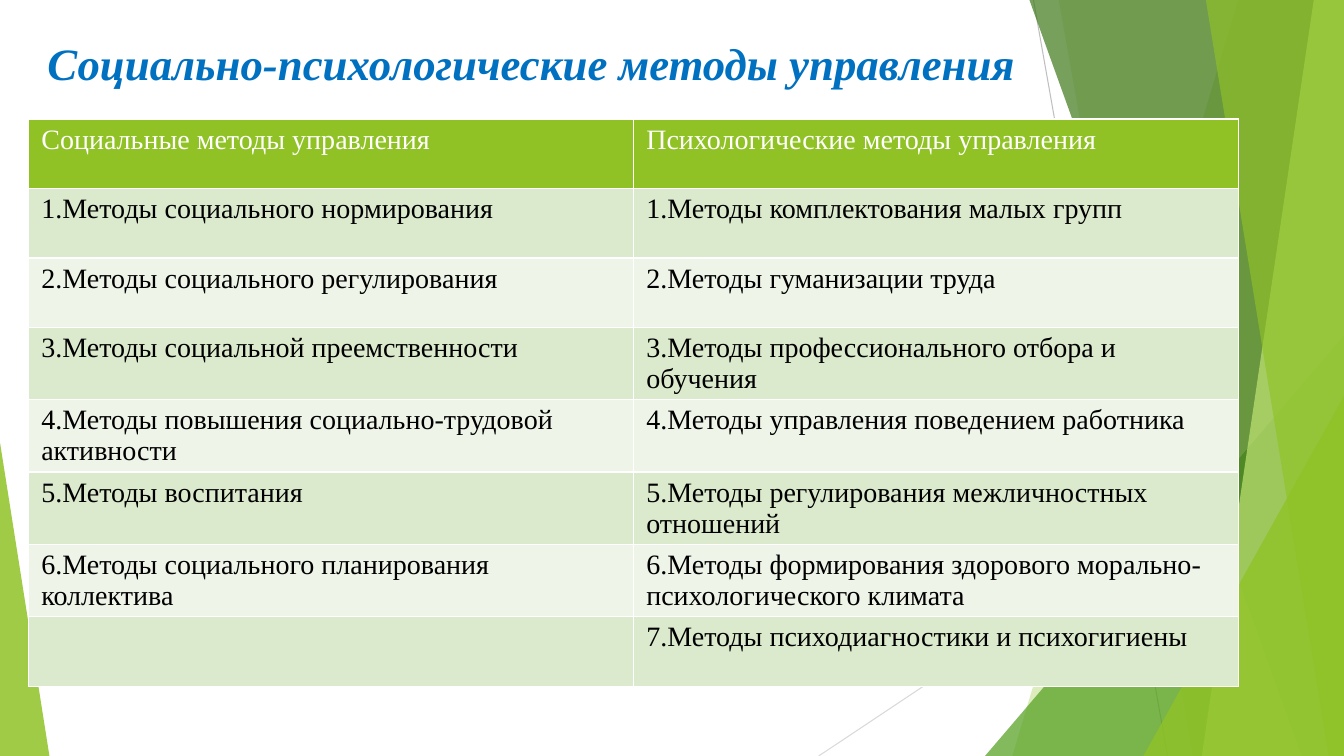
from pptx import Presentation, util as u
from pptx.dml.color import RGBColor
from pptx.enum import shapes, text
from pptx.oxml.ns import qn
from lxml import etree

WIDTH, HEIGHT = 13.33, 7.5
FONT = "Times New Roman"
GREEN = "90C226"


def color(hex_value):
    return RGBColor.from_string(hex_value)


def paint(shape, hex_value, opacity):
    """Fill a shape with a see-through colour, without outline or shadow."""
    shape.shadow.inherit = False
    shape.line.fill.background()
    shape.fill.solid()
    shape.fill.fore_color.rgb = color(hex_value)
    tint = shape.fill._xPr.find(qn("a:solidFill"))[0]
    etree.SubElement(tint, qn("a:alpha"), val=str(opacity * 1000))


deck = Presentation()
deck.slide_width, deck.slide_height = u.Inches(WIDTH), u.Inches(HEIGHT)
slide = deck.slides.add_slide(deck.slide_layouts[5])
items = slide.shapes

# Thin background lines
for x1, y1, x2, y2, gray in [
    (10.25, 0, 11.58, HEIGHT, "BFBFBF"),
    (WIDTH, 4.03, 8.12, HEIGHT, "D9D9D9"),
]:
    ray = items.add_connector(shapes.MSO_CONNECTOR.STRAIGHT,
                              *map(u.Inches, (x1, y1, x2, y2)))
    ray.line.color.rgb = color(gray)
    ray.line.width = u.Pt(0.75)
    etree.SubElement(ray._element.spPr, qn("a:effectLst"))

# Green facets from back to front:
# a band runs to the right edge from its top x and bottom x,
# a triangle has left, top, width, apex position
facets = [
    ("band", (12.28, 10.04), GREEN, 30),
    ("band", (10.5, 11.83), GREEN, 20),
    ("triangle", (9.77, 3.33, 3.56, 1), "54A021", 72),
    ("band", (10.21, 12.91), "3F7819", 70),
    ("band", (13.03, 11.92), "C0E474", 70),
    ("band", (11.96, 13.18), GREEN, 65),
    ("triangle", (11.34, 3.93, 1.99, 1), GREEN, 80),
    ("triangle", (0, 4.39, 0.49, 0), GREEN, 85),
]
for kind, place, hue, opacity in facets:
    if kind == "band":
        top_x, bottom_x = place
        corners = [(u.Inches(x), u.Inches(y)) for x, y in
                   [(top_x, 0), (WIDTH, 0), (WIDTH, HEIGHT), (bottom_x, HEIGHT)]]
        outline = items.build_freeform(*corners[0])
        outline.add_line_segments(corners[1:], close=True)
        facet = outline.convert_to_shape()
    else:
        left, top, width, apex = place
        facet = items.add_shape(shapes.MSO_SHAPE.ISOSCELES_TRIANGLE,
                                *map(u.Inches, (left, top, width, HEIGHT - top)))
        facet.adjustments[0] = apex
    paint(facet, hue, opacity)

# Title, brought in front of the facets
heading = items.title
items._spTree.append(heading._element)
heading.left, heading.top = u.Inches(0.37), u.Inches(0.3)
heading.width, heading.height = u.Inches(12), u.Inches(1.25)
heading.text_frame.vertical_anchor = text.MSO_ANCHOR.TOP
heading_line = heading.text_frame.paragraphs[0]
heading_line.alignment = text.PP_ALIGN.LEFT
words = heading_line.add_run()
words.text = "Социально-психологические методы управления"
words.font.name, words.font.size = FONT, u.Pt(32)
words.font.bold = words.font.italic = True
words.font.color.rgb = color("0070C0")

# Table of methods; the default style supplies the white borders
methods = [
    ("Социальные методы управления", "Психологические методы управления"),
    ("1.Методы социального нормирования", "1.Методы комплектования малых групп"),
    ("2.Методы социального регулирования", "2.Методы гуманизации труда"),
    ("3.Методы социальной преемственности",
     "3.Методы профессионального отбора и обучения"),
    ("4.Методы повышения социально-трудовой активности",
     "4.Методы управления поведением работника"),
    ("5.Методы воспитания", "5.Методы регулирования межличностных отношений"),
    ("6.Методы социального планирования коллектива",
     "6.Методы формирования здорового морально-психологического климата"),
    ("", "7.Методы психодиагностики и психогигиены"),
]
ROW = 0.69
table = items.add_table(len(methods), 2, u.Inches(0.28), u.Inches(1.18),
                        u.Inches(12), u.Inches(ROW * len(methods))).table
for r, pair in enumerate(methods):
    table.rows[r].height = u.Inches(ROW)
    band = GREEN if r == 0 else ("EEF4E8", "DBE9CD")[r % 2]
    for c, method in enumerate(pair):
        cell = table.cell(r, c)
        cell.fill.solid()
        cell.fill.fore_color.rgb = color(band)
        cell.margin_left = cell.margin_right = u.Inches(0.13)
        cell.margin_top = cell.margin_bottom = u.Inches(0.05)
        if method:
            entry = cell.text_frame.paragraphs[0].add_run()
            entry.text = method
            entry.font.name, entry.font.size = FONT, u.Pt(20)
            entry.font.bold = False
            entry.font.color.rgb = color("FFFFFF" if r == 0 else "000000")

deck.save("out.pptx")
